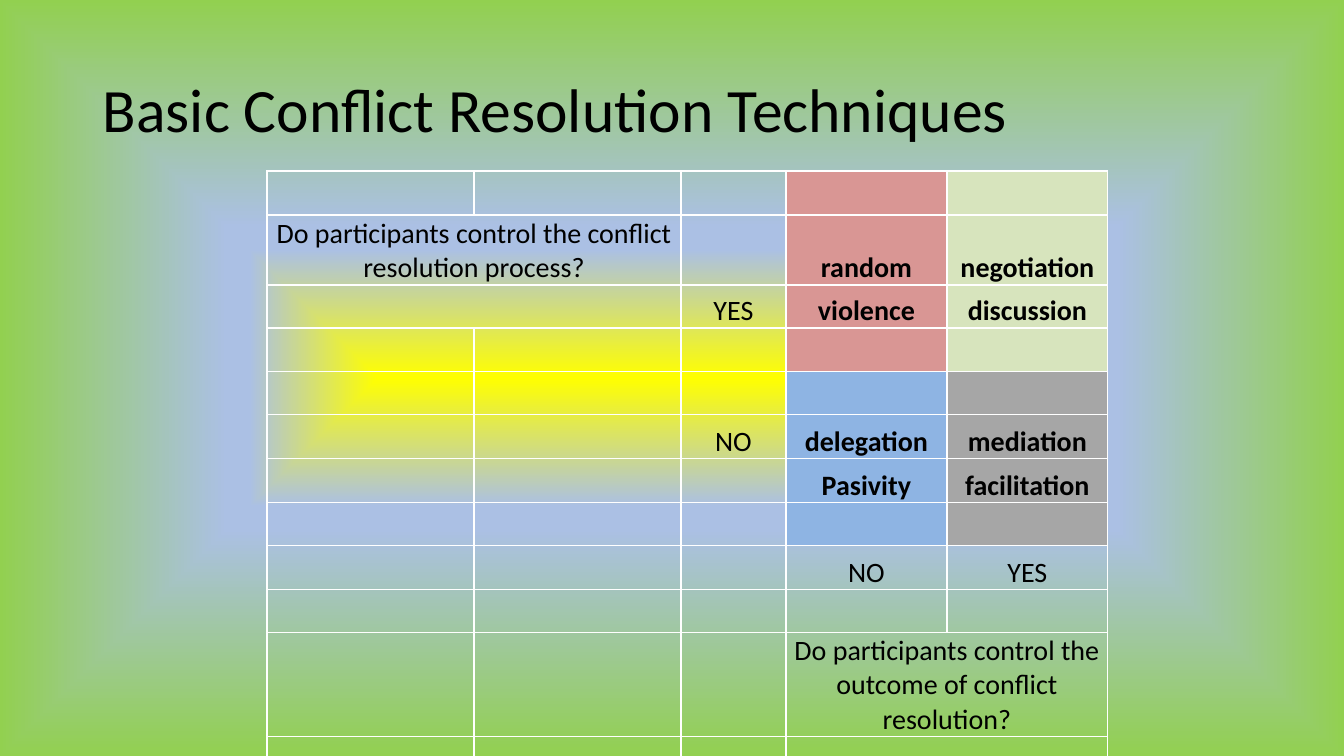
from pptx import Presentation
from pptx.dml.color import RGBColor
from pptx.enum.text import MSO_ANCHOR, PP_ALIGN
from pptx.oxml import parse_xml
from pptx.oxml.ns import nsdecls
from pptx.util import Pt

EMU_PER_PX = 12192000 / 1344
COLORS = {
    "text": "000000", "border": "FFFFFF",
    "center": "FFFF00", "middle": "ABC0E4", "edge": "92D050",
    "red": "D99694", "green": "D7E4BD", "blue": "8EB4E3", "gray": "A6A6A6",
}


def px(length):
    return round(length * EMU_PER_PX)


def style_text(paragraph, size, bold=False):
    for run in paragraph.runs:
        run.font.name = "Calibri"
        run.font.size = Pt(size)
        run.font.bold = bold
        run.font.color.rgb = RGBColor.from_string(COLORS["text"])


presentation = Presentation()
presentation.slide_width = px(1344)
presentation.slide_height = px(756)
slide = presentation.slides.add_slide(presentation.slide_layouts[6])

# Background: rectangular gradient from the center outwards
stops = [(0, "center"), (34, "middle"), (40, "middle"), (100, "edge")]
stop_xml = "".join(
    f'<a:gs pos="{position * 1000}"><a:srgbClr val="{COLORS[name]}"/></a:gs>'
    for position, name in stops
)
background = parse_xml(
    f'<p:bg {nsdecls("p", "a")}><p:bgPr><a:gradFill><a:gsLst>{stop_xml}</a:gsLst>'
    '<a:path path="shape"><a:fillToRect l="50000" t="50000" r="50000" b="50000"/></a:path>'
    '</a:gradFill><a:effectLst/></p:bgPr></p:bg>'
)
slide.element.cSld.insert(0, background)

# Title
title = slide.shapes.add_textbox(px(93), px(40), px(1109), px(146))
title.text_frame.word_wrap = True
title.text_frame.vertical_anchor = MSO_ANCHOR.MIDDLE
title.text_frame.text = "Basic Conflict Resolution Techniques"
title_paragraph = title.text_frame.paragraphs[0]
title_paragraph.line_spacing = 0.9
style_text(title_paragraph, 44)

# Table grid
column_widths = [207, 207, 105, 161, 161]
row_heights = [44, 70, 43, 44, 43, 44, 44, 43, 44, 43, 104, 44]
shape = slide.shapes.add_table(
    len(row_heights), len(column_widths),
    px(267), px(171), px(sum(column_widths)), px(sum(row_heights)),
)
table = shape.table
table.first_row = False
table.horz_banding = False
for column, width in zip(table.columns, column_widths):
    column.width = px(width)
for row, height in zip(table.rows, row_heights):
    row.height = px(height)

# Table wording by (row, column)
labels = {
    (1, 0): "Do participants control the conflict resolution process?",
    (2, 2): "YES",
    (5, 2): "NO",
    (8, 3): "NO",
    (8, 4): "YES",
    (10, 3): "Do participants control the outcome of conflict resolution?",
}
techniques = {
    (1, 3): "random", (1, 4): "negotiation",
    (2, 3): "violence", (2, 4): "discussion",
    (5, 3): "delegation", (5, 4): "mediation",
    (6, 3): "Pasivity", (6, 4): "facilitation",
}
wording = labels | techniques

# Each quadrant covers four rows of one column
quadrants = {(0, 3): "red", (0, 4): "green", (1, 3): "blue", (1, 4): "gray"}

# Cell fills, borders and text
for row_index in range(len(row_heights)):
    for column_index in range(len(column_widths)):
        position = (row_index, column_index)
        cell = table.cell(*position)
        fill_name = quadrants.get((row_index // 4, column_index))
        if fill_name:
            cell.fill.solid()
            cell.fill.fore_color.rgb = RGBColor.from_string(COLORS[fill_name])
        else:
            cell.fill.background()
        properties = cell._tc.get_or_add_tcPr()
        for order, side in enumerate(("lnL", "lnR", "lnT", "lnB")):
            properties.insert(order, parse_xml(
                f'<a:{side} {nsdecls("a")} w="{Pt(1)}"><a:solidFill>'
                f'<a:srgbClr val="{COLORS["border"]}"/></a:solidFill></a:{side}>'
            ))
        if position in wording:
            cell.text_frame.text = wording[position]
            cell.vertical_anchor = MSO_ANCHOR.BOTTOM
            cell.margin_left = cell.margin_right = cell.margin_top = px(1)
            cell.margin_bottom = 0
            paragraph = cell.text_frame.paragraphs[0]
            paragraph.alignment = PP_ALIGN.CENTER
            style_text(paragraph, 20, bold=position in techniques)

# Question cells span two columns
for row_index, first_column in [(1, 0), (2, 0), (10, 3), (11, 3)]:
    table.cell(row_index, first_column).merge(table.cell(row_index, first_column + 1))

presentation.save("out.pptx")
